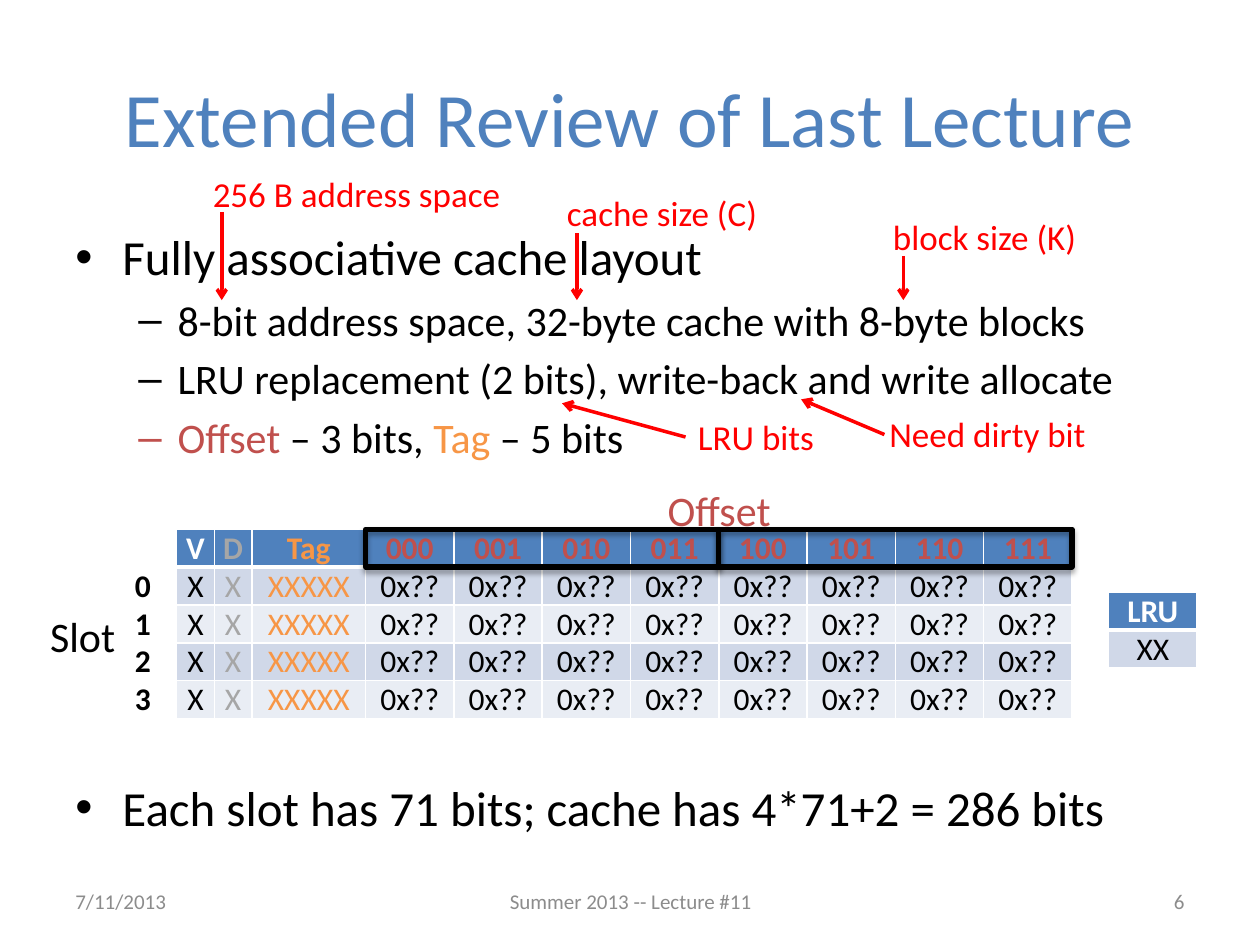
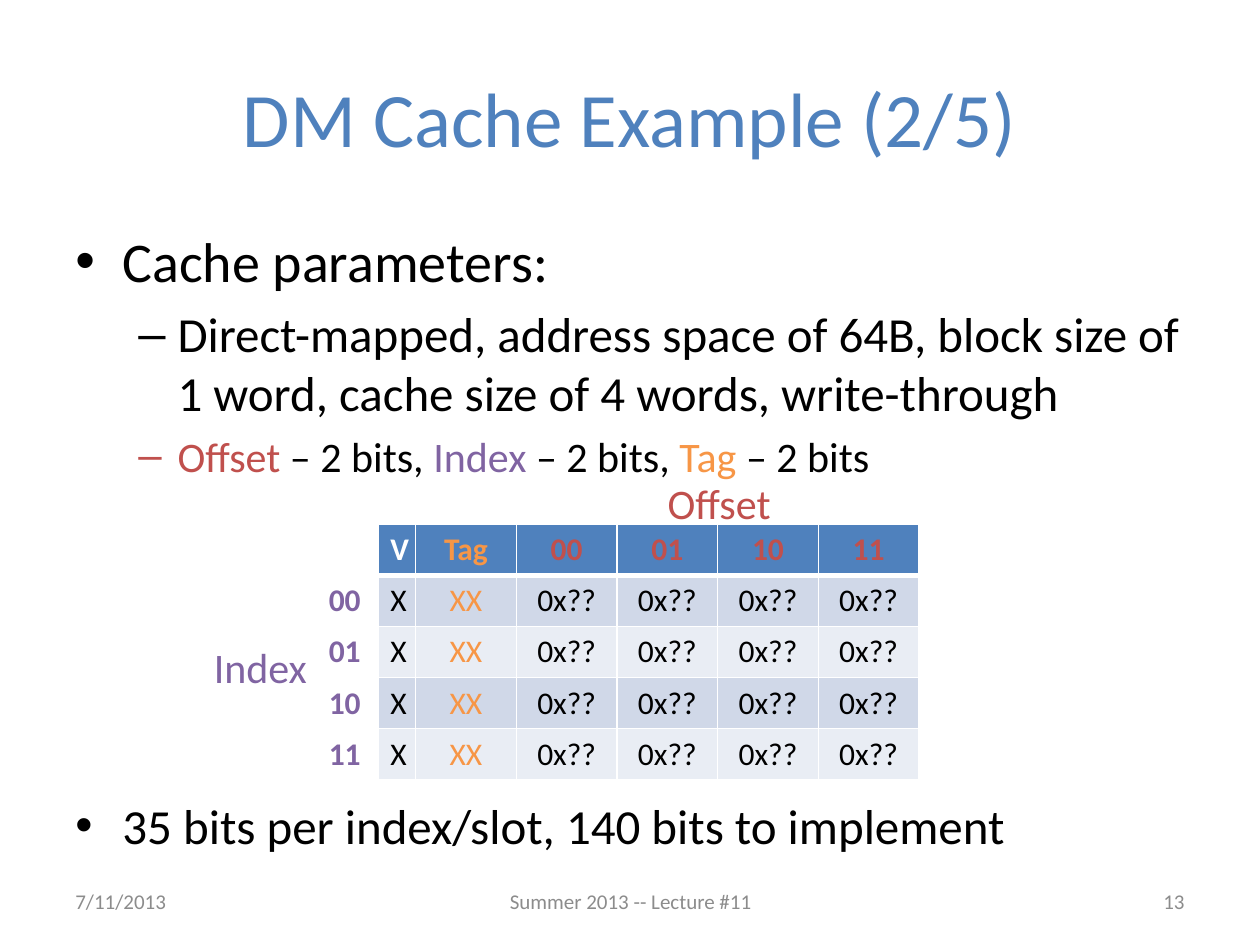
from lxml.etree import SubElement
from pptx import Presentation
from pptx.dml.color import RGBColor
from pptx.enum.shapes import MSO_CONNECTOR, MSO_SHAPE
from pptx.enum.text import MSO_ANCHOR, PP_ALIGN
from pptx.oxml.ns import qn
from pptx.util import Cm, Pt

BLUE = RGBColor(0x4F, 0x81, 0xBD)
RED = RGBColor(0xC0, 0x50, 0x4D)
ORANGE = RGBColor(0xF7, 0x96, 0x46)
PURPLE = RGBColor(0x80, 0x64, 0xA2)
CALLOUT_RED = RGBColor(0xFF, 0x00, 0x00)
GRAY = RGBColor(0xA6, 0xA6, 0xA6)
FOOTER_GRAY = RGBColor(0x8C, 0x8C, 0x8C)
BLACK = RGBColor(0x00, 0x00, 0x00)
WHITE = RGBColor(0xFF, 0xFF, 0xFF)
BANDS = RGBColor(0xD0, 0xD8, 0xE8), RGBColor(0xE9, 0xED, 0xF4)

FONT = "Calibri"
NO_TABLE_STYLE = "{2D5ABB26-0587-4C30-8999-92F81FD0307C}"
BULLETS = [("•", 0.95, 0.95), ("–", 2.06, 0.79)]
CLOSING_GAP = 180
LABEL_WIDTH = 1.7
FOOTER_TOP, FOOTER_HEIGHT = 17.65, 1.02
DATE, COURSE = "7/11/2013", "Summer 2013 -- Lecture #11"

REVIEW = {
    "title": "Extended Review of Last Lecture",
    "number": "6",
    "bullets": [
        (0, 28, [("Fully associative cache layout", BLACK)]),
        (1, 24, [("8-bit address space, 32-byte cache with 8-byte blocks", BLACK)]),
        (1, 24, [("LRU replacement (2 bits), write-back and write allocate", BLACK)]),
        (1, 24, [("Offset", RED), (" – 3 bits, ", BLACK), ("Tag", ORANGE), (" – 5 bits", BLACK)]),
    ],
    "closing": "Each slot has 71 bits; cache has 4*71+2 = 286 bits",
    "place": (3.56, 10.67),
    "row_height": 0.76,
    "padding": (0, 0),
    "columns": [("V", "X", 0.76, WHITE, BLACK), ("D", "X", 0.76, GRAY, GRAY),
                ("Tag", "XXXXX", 2.29, ORANGE, ORANGE)]
               + [(f"{offset:03b}", "0x??", 1.78, RED, BLACK) for offset in range(8)],
    "row_labels": ["0", "1", "2", "3"],
    "row_label_left": 2.03,
    "row_label_color": BLACK,
    "captions": [("Offset", (13.21, 9.65, 3.35, 1.27), RED),
                 ("Slot", (0.76, 12.19, 1.93, 1.27), BLACK)],
}

DIRECT_MAPPED = {
    "title": "DM Cache Example (2/5)",
    "number": "13",
    "bullets": [
        (0, 32, [("Cache parameters:", BLACK)]),
        (1, 28, [("Direct-mapped, address space of 64B, block size of 1 word, "
                  "cache size of 4 words, write-through", BLACK)]),
        (1, 24, [("Offset", RED), (" – 2 bits, ", BLACK), ("Index", PURPLE),
                 (" – 2 bits, ", BLACK), ("Tag", ORANGE), (" – 2 bits", BLACK)]),
    ],
    "closing": "35 bits per index/slot, 140 bits to implement",
    "place": (7.62, 10.57),
    "row_height": 1.03,
    "padding": (0.25, 0.13),
    "columns": [("V", "X", 0.76, WHITE, BLACK), ("Tag", "XX", 2.03, ORANGE, ORANGE)]
               + [(f"{offset:02b}", "0x??", 2.03, RED, BLACK) for offset in range(4)],
    "row_labels": ["00", "01", "10", "11"],
    "row_label_left": 6.1,
    "row_label_color": PURPLE,
    "captions": [("Index", (4.06, 12.8, 2.72, 1.27), PURPLE),
                 ("Offset", (13.21, 9.5, 4.57, 1.27), RED)],
}

CALLOUTS = [
    ("cache size (C)", (11.18, 3.73, 4.39, 1.12), (11.63, 4.7), (11.63, 6.05)),
    ("block size (K)", (17.75, 4.22, 4.24, 1.12), (18.21, 5.16), (18.21, 6.05)),
    ("256 B address space", (4.04, 3.35, 6.38, 1.12), (4.47, 4.27), (4.47, 6.05)),
    ("Need dirty bit", (17.68, 8.2, 4.57, 1.02), (17.83, 8.76), (16.15, 8.05)),
    ("LRU bits", (13.82, 8.26, 3.15, 1.12), (13.82, 8.81), (11.33, 8.13)),
]
LRU_PLACE = 22.35, 11.94
LRU_COLUMN = [("LRU", "XX", 1.78, WHITE, BLACK)]


def format_run(run, size, color, bold=False):
    run.font.name = FONT
    run.font.size = Pt(size)
    run.font.bold = bold
    run.font.color.rgb = color


def write(text_frame, text, size, color, align=PP_ALIGN.LEFT, bold=False):
    text_frame.text = text
    paragraph = text_frame.paragraphs[0]
    paragraph.alignment = align
    for run in paragraph.runs:
        format_run(run, size, color, bold)


def add_text(slide, box, text, size, color, align=PP_ALIGN.LEFT, anchor=MSO_ANCHOR.TOP):
    text_frame = slide.shapes.add_textbox(*map(Cm, box)).text_frame
    text_frame.word_wrap = True
    text_frame.vertical_anchor = anchor
    write(text_frame, text, size, color, align)


def add_bullets(slide, bullets, closing):
    text_frame = slide.shapes.add_textbox(Cm(1.27), Cm(4.45), Cm(22.86), Cm(13.72)).text_frame
    text_frame.word_wrap = True
    paragraphs = bullets + [(0, 28, [(closing, BLACK)])]
    for index, (level, size, parts) in enumerate(paragraphs):
        paragraph = text_frame.add_paragraph() if index else text_frame.paragraphs[0]
        paragraph.level = level
        gap = 0.2 * size if index else 0
        paragraph.space_before = Pt(CLOSING_GAP if index == len(bullets) else gap)
        mark, margin, hanging = BULLETS[level]
        properties = paragraph._p.get_or_add_pPr()
        properties.set("marL", str(Cm(margin)))
        properties.set("indent", str(-Cm(hanging)))
        SubElement(properties, qn("a:buFont"), typeface="Arial")
        SubElement(properties, qn("a:buChar"), char=mark)
        for text, color in parts:
            run = paragraph.add_run()
            run.text = text
            format_run(run, size, color)


def add_border(cell, side, width):
    line = SubElement(cell._tc.get_or_add_tcPr(), qn(f"a:{side}"), w=str(Pt(width)))
    fill = SubElement(line, qn("a:solidFill"))
    SubElement(fill, qn("a:srgbClr"), val=str(WHITE))


def add_plain_table(slide, place, widths, row_height, row_count, padding):
    frame = slide.shapes.add_table(row_count, len(widths), *map(Cm, place),
                                   Cm(sum(widths)), Cm(row_height * row_count))
    table = frame.table
    table.first_row = table.horz_banding = False
    table._tbl.tblPr.find(qn("a:tableStyleId")).text = NO_TABLE_STYLE
    for column, width in zip(table.columns, widths):
        column.width = Cm(width)
    for row in table.rows:
        row.height = Cm(row_height)
    for cell in table.iter_cells():
        cell.margin_left = cell.margin_right = Cm(padding[0])
        cell.margin_top = cell.margin_bottom = Cm(padding[1])
    return table


def add_cache_table(slide, place, columns, row_height, row_count, padding):
    widths = [column[2] for column in columns]
    table = add_plain_table(slide, place, widths, row_height, row_count, padding)
    for row in range(row_count):
        for index, (header, value, _, header_color, value_color) in enumerate(columns):
            cell = table.cell(row, index)
            for side in ("lnL", "lnR", "lnT", "lnB"):
                thick = (side, row) in (("lnB", 0), ("lnT", 1))
                add_border(cell, side, 3 if thick else 1)
            cell.fill.solid()
            cell.fill.fore_color.rgb = BANDS[(row - 1) % 2] if row else BLUE
            text, color = (value, value_color) if row else (header, header_color)
            write(cell.text_frame, text, 18, color, PP_ALIGN.CENTER, bold=row == 0)


def add_row_labels(slide, place, labels, color, row_height, padding):
    table = add_plain_table(slide, place, [LABEL_WIDTH], row_height, len(labels) + 1, padding)
    for row, label in enumerate(labels, 1):
        cell = table.cell(row, 0)
        cell.vertical_anchor = MSO_ANCHOR.MIDDLE
        write(cell.text_frame, label, 18, color, PP_ALIGN.CENTER, bold=True)


def add_offset_frame(slide, left, top, width, height):
    shape = slide.shapes.add_shape(MSO_SHAPE.RECTANGLE, *map(Cm, (left, top, width, height)))
    shape.fill.background()
    shape.line.color.rgb = BLACK
    shape.line.width = Pt(3)
    shape.shadow.inherit = False
    effects = shape._element.spPr.find(qn("a:effectLst"))
    shadow = SubElement(effects, qn("a:outerShdw"), blurRad=str(Pt(3.1)), dist=str(Pt(1.8)),
                        dir="5400000", rotWithShape="0")
    color = SubElement(shadow, qn("a:srgbClr"), val=str(BLACK))
    SubElement(color, qn("a:alpha"), val="35000")


def add_callout(slide, text, box, start, end):
    arrow = slide.shapes.add_connector(MSO_CONNECTOR.STRAIGHT, *map(Cm, start + end))
    arrow.line.color.rgb = CALLOUT_RED
    arrow.line.width = Pt(2)
    SubElement(arrow.line._get_or_add_ln(), qn("a:tailEnd"), type="arrow")
    SubElement(arrow._element.spPr, qn("a:effectLst"))
    add_text(slide, box, text, 20, CALLOUT_RED)


def add_cache_slide(presentation, content):
    slide = presentation.slides.add_slide(presentation.slide_layouts[5])
    title = slide.shapes.title
    title.left, title.top, title.width, title.height = map(Cm, (1.27, 0.76, 22.86, 3.18))
    title.text_frame.vertical_anchor = MSO_ANCHOR.MIDDLE
    write(title.text_frame, content["title"], 44, BLUE, PP_ALIGN.CENTER)
    add_bullets(slide, content["bullets"], content["closing"])

    for text, left, width, align in ((DATE, 1.27, 5.92, PP_ALIGN.LEFT),
                                     (COURSE, 8.69, 8.05, PP_ALIGN.CENTER),
                                     (content["number"], 18.21, 5.92, PP_ALIGN.RIGHT)):
        add_text(slide, (left, FOOTER_TOP, width, FOOTER_HEIGHT), text, 12, FOOTER_GRAY,
                 align, MSO_ANCHOR.MIDDLE)

    labels, height, padding = content["row_labels"], content["row_height"], content["padding"]
    add_cache_table(slide, content["place"], content["columns"], height, len(labels) + 1, padding)
    add_row_labels(slide, (content["row_label_left"], content["place"][1]), labels,
                   content["row_label_color"], height, padding)
    for text, box, color in content["captions"]:
        add_text(slide, box, text, 24, color)
    return slide


def add_review_details(slide):
    left, top = REVIEW["place"]
    widths = [column[2] for column in REVIEW["columns"]]
    offsets_left = left + sum(widths[:3])
    half_width = sum(widths[3:]) / 2
    for half in range(2):
        add_offset_frame(slide, offsets_left + half * half_width, top,
                         half_width, REVIEW["row_height"])
    add_cache_table(slide, LRU_PLACE, LRU_COLUMN, REVIEW["row_height"], 2, REVIEW["padding"])
    for callout in CALLOUTS:
        add_callout(slide, *callout)


def main():
    presentation = Presentation()
    presentation.slide_width, presentation.slide_height = Cm(25.4), Cm(19.05)
    add_review_details(add_cache_slide(presentation, REVIEW))
    add_cache_slide(presentation, DIRECT_MAPPED)
    presentation.save("out.pptx")


if __name__ == "__main__":
    main()
